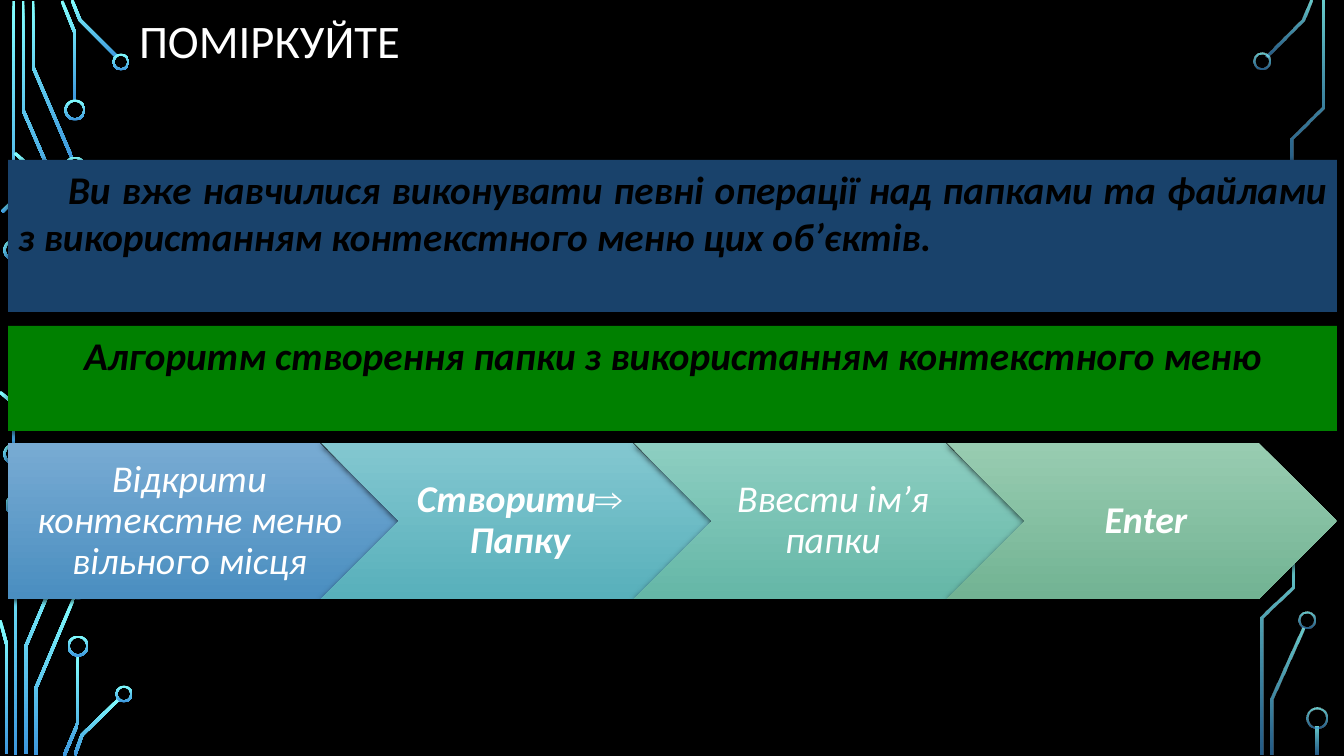
"""Build a slide on creating a folder, framed by circuit traces."""
from math import hypot

from lxml import etree
from pptx import Presentation
from pptx.dml.color import RGBColor
from pptx.enum.shapes import MSO_SHAPE
from pptx.enum.text import MSO_ANCHOR, PP_ALIGN
from pptx.oxml.ns import qn
from pptx.util import Pt

RECT, RING = MSO_SHAPE.RECTANGLE, MSO_SHAPE.DONUT
PLATE, ARROW = MSO_SHAPE.PENTAGON, MSO_SHAPE.CHEVRON
TOP, MIDDLE = MSO_ANCHOR.TOP, MSO_ANCHOR.MIDDLE
LEFT, CENTER, JUSTIFY = PP_ALIGN.LEFT, PP_ALIGN.CENTER, PP_ALIGN.JUSTIFY

BLACK = RGBColor(0x00, 0x00, 0x00)
WHITE = RGBColor(0xFF, 0xFF, 0xFF)
NAVY = RGBColor(0x19, 0x42, 0x6B)
GREEN = RGBColor(0x00, 0x80, 0x00)
GLOW = (RGBColor(0x82, 0xFF, 0xFF), RGBColor(0x3D, 0x97, 0xDE))
BLUE = (RGBColor(0x78, 0xAB, 0xD3), RGBColor(0x4A, 0x8E, 0xC0))
CYAN = (RGBColor(0x83, 0xC7, 0xD0), RGBColor(0x58, 0xB0, 0xBB))
TEAL = (RGBColor(0x8D, 0xCE, 0xC1), RGBColor(0x65, 0xB7, 0xA7))
MINT = (RGBColor(0x98, 0xCC, 0xB1), RGBColor(0x72, 0xB3, 0x93))

FONT, SIGN = "Calibri", "Times New Roman"
TITLE = "ПОМІРКУЙТЕ"
BANDS = [
    ("Ви вже навчилися виконувати певні операції над папками та файлами "
     "з використанням контекстного меню цих об’єктів.",
     160, 152, NAVY, JUSTIFY, 50),
    ("Алгоритм створення папки з використанням контекстного меню",
     326, 105, GREEN, CENTER, 0),
]
STEPS = [
    (["Відкрити контекстне меню вільного місця"], False, BLUE),
    (["Створити", "⇒ ", "Папку"], True, CYAN),
    (["Ввести ім’я папки"], False, TEAL),
    (["Enter"], True, MINT),
]

SOLID, FADED = (100, 100), (80, 60)
TRACES = [
    (SOLID, [
        [(14, 1), (14, 242)],
        [(62, 200), (23, 110), (23, 1)],
        [(72, 158), (33, 67), (33, 1)],
        [(75, 101), (75, 33), (62, 1)],
        [(117, 57), (80, 20), (72, 0)],
        [(2, 212), (14, 200)],
        [(14, 445), (14, 404), (0, 392)],
        [(29, 205), (29, 166), (15, 153)],
        [(16, 514), (16, 755)],
        [(26, 754), (26, 646), (64, 556)],
        [(7, 754), (7, 646), (0, 620)],
        [(36, 755), (36, 688), (74, 598)],
        [(64, 756), (78, 723), (78, 655)],
        [(75, 755), (82, 735), (119, 699)],
    ], [
        (14, 250, 21), (14, 454, 21), (75, 167, 21), (75, 110, 21),
        (121, 62, 17), (16, 505, 21), (69, 547, 21), (78, 589, 21),
        (78, 646, 21), (124, 694, 17),
    ]),
    (FADED, [
        [(1267, 56), (1303, 20), (1311, 0)],
        [(1272, 755), (1272, 699), (1303, 628)],
        [(1292, 171), (1292, 139), (1323, 108), (1323, 1)],
        [(1262, 755), (1262, 618), (1293, 588), (1293, 556)],
        [(1317, 727), (1317, 755)],
    ], [(1262, 61, 17), (1307, 620, 17), (1293, 547, 21), (1317, 718, 21)]),
]
WIRE = 3
EDGE, SPAN = 8, 1329
ROW, HIGH, WIDE = 443, 156, 390
SCALE = 914400 / 100.8


def px(size):
    return round(size * SCALE)


def blend(shape, pair, alphas=SOLID):
    shape.shadow.inherit = False
    shape.line.fill.background()
    shape.fill.gradient()
    shape.fill.gradient_angle = 270
    for stop, color in zip(shape.fill.gradient_stops, pair):
        stop.color.rgb = color
    if alphas != SOLID:
        for node, alpha in zip(shape._element.spPr.iter(qn("a:srgbClr")), alphas):
            etree.SubElement(node, qn("a:alpha"), val=str(alpha * 1000))


def shade(shape):
    shape.shadow.inherit = False
    effects = shape._element.spPr.find(qn("a:effectLst"))
    cast = etree.SubElement(effects, qn("a:outerShdw"), blurRad=str(Pt(4.5)),
                            dist=str(Pt(1.5)), dir="5400000", rotWithShape="0")
    color = etree.SubElement(cast, qn("a:srgbClr"), val=str(BLACK))
    etree.SubElement(color, qn("a:alpha"), val="63000")


def write(shape, texts, size, color, bold, italic, align, anchor, insets):
    frame = shape.text_frame
    frame.word_wrap = True
    frame.vertical_anchor = anchor
    (frame.margin_left, frame.margin_top,
     frame.margin_right, frame.margin_bottom) = map(px, insets)
    para = frame.paragraphs[0]
    para.alignment = align
    for text in texts:
        run = para.add_run()
        run.text = text
        if "⇒" in text:
            run.font.name = SIGN
    font = para.font
    font.name, font.size, font.bold, font.italic = FONT, Pt(size), bold, italic
    font.color.rgb = color
    return para


def ribbon(points):
    norms = []
    for (ax, ay), (bx, by) in zip(points, points[1:]):
        length = hypot(bx - ax, by - ay)
        norms.append(((ay - by) / length, (bx - ax) / length))
    near, far = [], []
    pairs = zip(points, norms[:1] + norms, norms + norms[-1:])
    for (x, y), (ax, ay), (bx, by) in pairs:
        reach = WIRE / 2 / (1 + ax * bx + ay * by)
        dx, dy = (ax + bx) * reach, (ay + by) * reach
        near.append((px(x + dx), px(y + dy)))
        far.append((px(x - dx), px(y - dy)))
    return near + far[::-1]


def main():
    deck = Presentation()
    deck.slide_width, deck.slide_height = px(1344), px(756)
    slide = deck.slides.add_slide(deck.slide_layouts[6])
    slide.background.fill.solid()
    slide.background.fill.fore_color.rgb = BLACK
    shapes = slide.shapes

    for alphas, wires, rings in TRACES:
        for wire in wires:
            first, *rest = ribbon(wire)
            path = shapes.build_freeform(*first)
            path.add_line_segments(rest)
            blend(path.convert_to_shape(), GLOW, alphas)
        for x, y, size in rings:
            ring = shapes.add_shape(RING, px(x - size / 2), px(y - size / 2),
                                    px(size), px(size))
            ring.adjustments[0] = 2 / size
            blend(ring, GLOW, alphas)

    title = shapes.add_textbox(px(129), px(18), px(1181), px(58))
    para = write(title, [TITLE], 33.3, WHITE, False, False, LEFT, TOP, (10, 5, 10, 5))
    para.line_spacing = 0.8

    for text, top, high, color, align, indent in BANDS:
        band = shapes.add_shape(RECT, px(EDGE), px(top), px(SPAN), px(high))
        band.fill.solid()
        band.fill.fore_color.rgb = color
        band.line.fill.background()
        shade(band)
        para = write(band, [text], 28, BLACK, True, True, align, TOP, (10, 5, 10, 5))
        if indent:
            para._p.get_or_add_pPr().set("indent", str(px(indent)))

    pitch = (SPAN - WIDE) / (len(STEPS) - 1)
    for i, (texts, bold, pair) in enumerate(STEPS):
        step = shapes.add_shape(ARROW if i else PLATE, px(EDGE + i * pitch),
                                px(ROW), px(WIDE), px(HIGH))
        blend(step, pair)
        shade(step)
        para = write(step, texts, 27, WHITE, bold, True, CENTER, MIDDLE,
                     (12 if i else 16, 8, 4, 8))
        para.line_spacing = 0.9

    deck.save("out.pptx")


if __name__ == "__main__":
    main()
